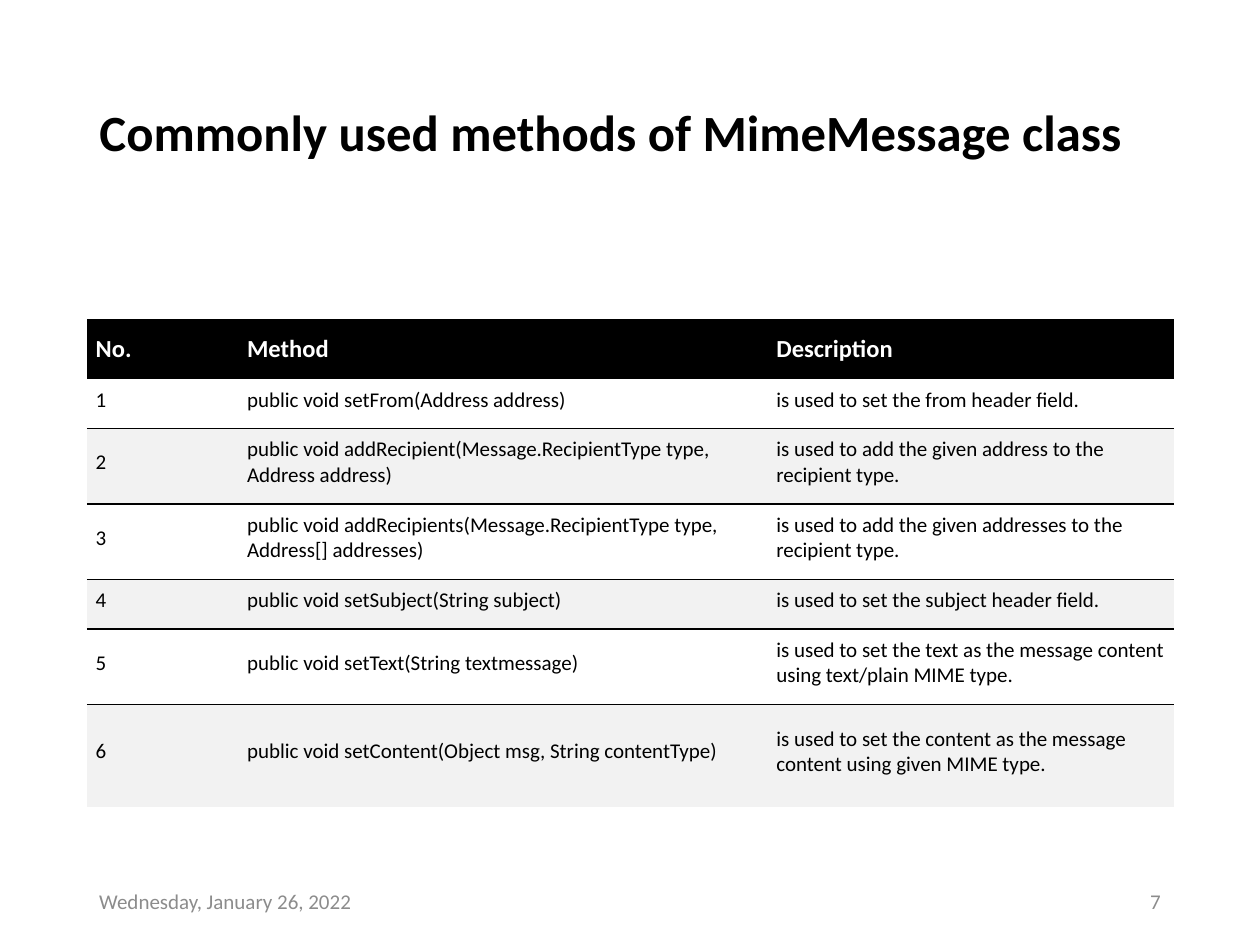
from pptx import Presentation
from pptx import util as u
from pptx.dml.color import RGBColor
from pptx.enum import text
from lxml import etree

BLACK = RGBColor(0, 0, 0)
WHITE = RGBColor(255, 255, 255)
PALE = RGBColor(0xF2, 0xF2, 0xF2)
GRAY = RGBColor(0x8C, 0x8C, 0x8C)
NS = "http://schemas.openxmlformats.org/drawingml/2006/main"
PLAIN = "{2D5ABB26-0587-4C30-8999-92F81FD0307C}"
MIDDLE = text.MSO_ANCHOR.MIDDLE


def style(frame, size, color, bold=False):
    for run in frame.paragraphs[0].runs:
        run.font.name = "Calibri"
        run.font.size = u.Pt(size)
        run.font.bold = bold
        run.font.color.rgb = color


def rule(cell):
    line = etree.Element(f"{{{NS}}}lnT", w=str(u.Pt(1)))
    fill = etree.SubElement(line, f"{{{NS}}}solidFill")
    etree.SubElement(fill, f"{{{NS}}}srgbClr", val=str(BLACK))
    cell._tc.get_or_add_tcPr().insert(0, line)


deck = Presentation()
deck.slide_width, deck.slide_height = u.Cm(25.4), u.Cm(19.05)
slide = deck.slides.add_slide(deck.slide_layouts[5])

title = slide.shapes.title
title.left, title.top = u.Cm(1.75), u.Cm(0.81)
title.width, title.height = u.Cm(21.89), u.Cm(2.59)
frame = title.text_frame
frame.text = "Commonly used methods of MimeMessage class"
frame.auto_size = text.MSO_AUTO_SIZE.NONE
frame.vertical_anchor = text.MSO_ANCHOR.BOTTOM
frame.paragraphs[0].alignment = text.PP_ALIGN.LEFT
frame.paragraphs[0].line_spacing = 0.9
style(frame, 29, BLACK, True)

rows = [
    ("No.", "Method", "Description"),
    ("1", "public void setFrom(Address address)",
     "is used to set the from header field."),
    ("2", "public void addRecipient(Message.RecipientType type, Address address)",
     "is used to add the given address to the recipient type."),
    ("3", "public void addRecipients(Message.RecipientType type, Address[] addresses)",
     "is used to add the given addresses to the recipient type."),
    ("4", "public void setSubject(String subject)",
     "is used to set the subject header field."),
    ("5", "public void setText(String textmessage)",
     "is used to set the text as the message content using text/plain MIME type."),
    ("6", "public void setContent(Object msg, String contentType)",
     "is used to set the content as the message content using given MIME type."),
]
widths = [3.05, 10.67, 8.19]
heights = [1.21, 1, 1.52, 1.52, 1, 1.52, 2.06]

table = slide.shapes.add_table(
    len(rows), len(widths), u.Cm(1.75), u.Cm(6.43),
    u.Cm(sum(widths)), u.Cm(sum(heights))).table
table._tbl.tblPr.find(f"{{{NS}}}tableStyleId").text = PLAIN
table.horz_banding = False
for col, width in zip(table.columns, widths):
    col.width = u.Cm(width)

for i, (row, height) in enumerate(zip(rows, heights)):
    table.rows[i].height = u.Cm(height)
    head = i == 0
    band = not head and i % 2 == 0
    for j, words in enumerate(row):
        cell = table.cell(i, j)
        cell.text_frame.text = words
        cell.vertical_anchor = MIDDLE
        cell.margin_left, cell.margin_right = u.Cm(0.18), u.Cm(0.13)
        cell.margin_top = u.Cm(0.25 if head else 0.1)
        cell.margin_bottom = u.Cm(0.25)
        style(cell.text_frame, 14 if head else 12, WHITE if head else BLACK, head)
        if head or band:
            cell.fill.solid()
            cell.fill.fore_color.rgb = BLACK if head else PALE
        else:
            cell.fill.background()
        if band:
            rule(cell)

notes = [
    (1.75, "Wednesday, January 26, 2022", text.PP_ALIGN.LEFT),
    (17.93, "7", text.PP_ALIGN.RIGHT),
]
for left, words, align in notes:
    box = slide.shapes.add_textbox(u.Cm(left), u.Cm(17.65), u.Cm(5.72), u.Cm(1.02))
    frame = box.text_frame
    frame.text = words
    frame.word_wrap = True
    frame.vertical_anchor = MIDDLE
    frame.paragraphs[0].alignment = align
    frame.paragraphs[0].space_after = u.Pt(6)
    style(frame, 12, GRAY)

deck.save("out.pptx")
